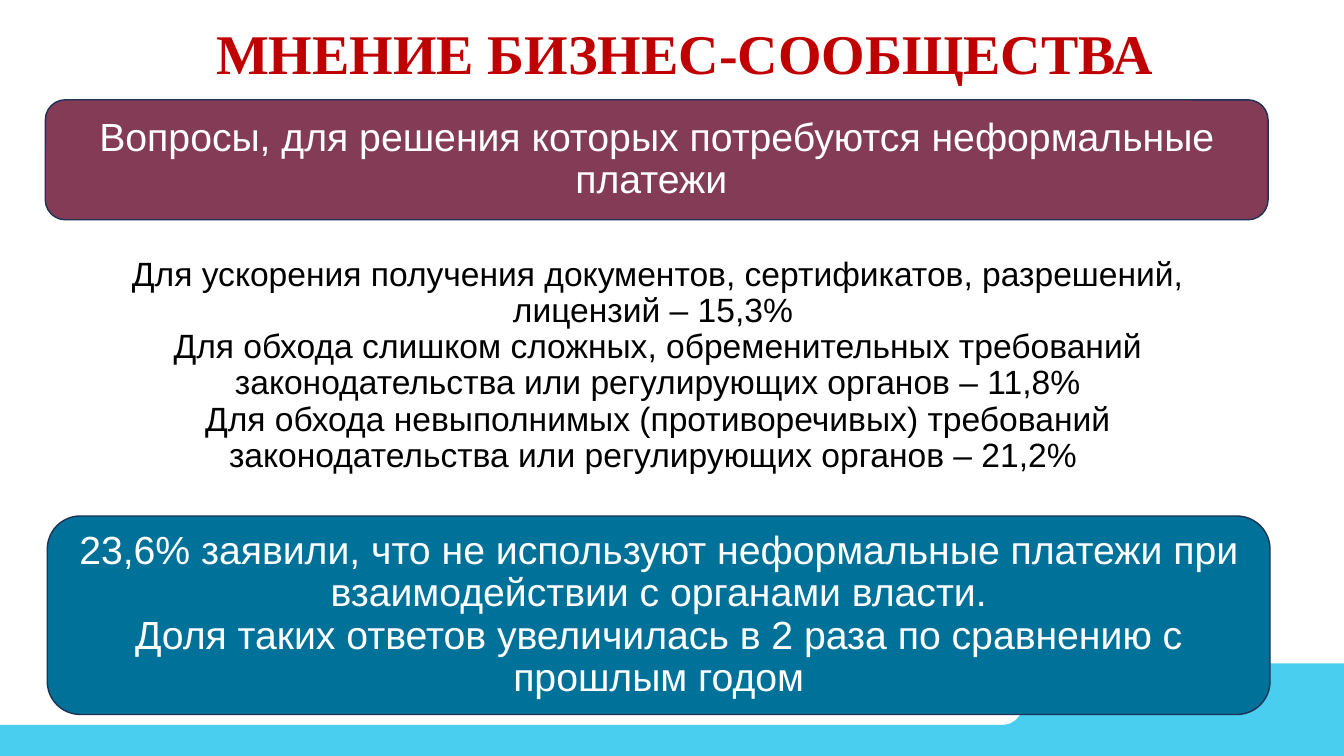
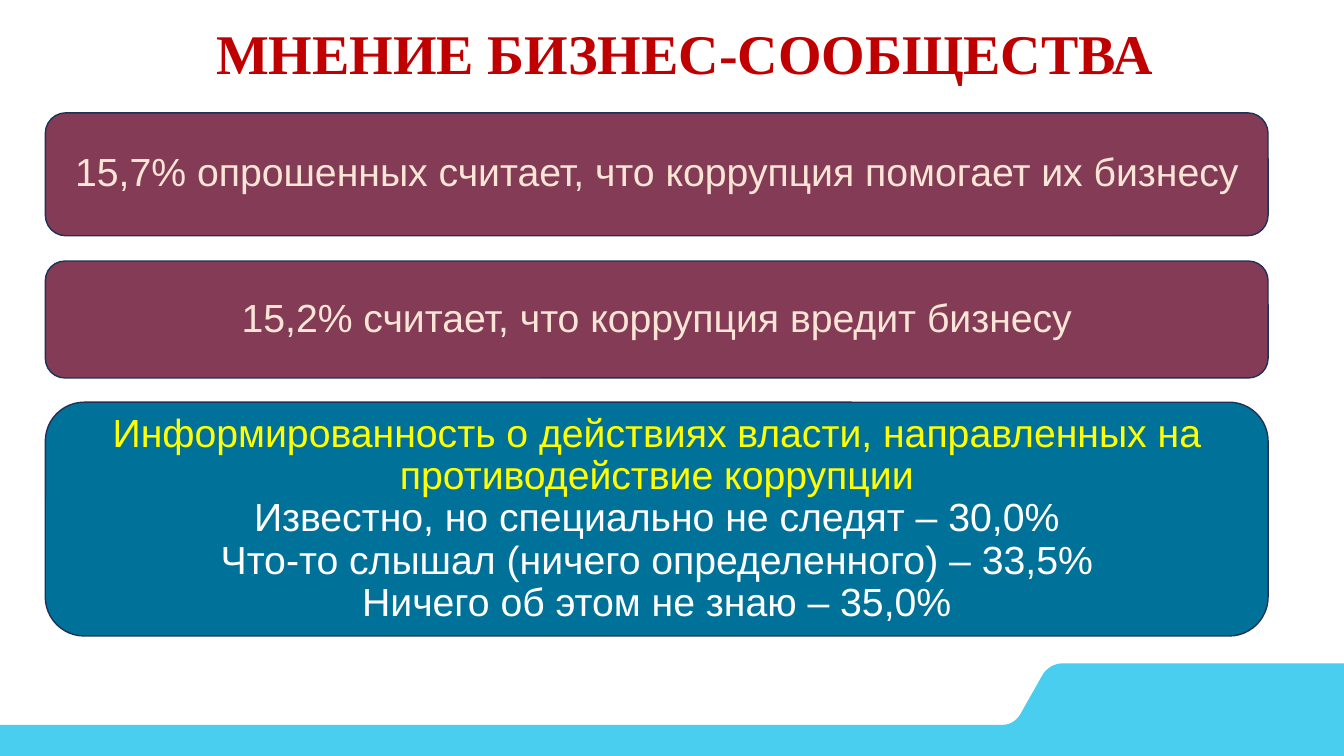
"""Build two slides on the opinion of the business community."""
from pptx import Presentation
from pptx.dml.color import RGBColor
from pptx.enum.shapes import MSO_SHAPE as Shape
from pptx.enum.text import MSO_ANCHOR as Anchor, PP_ALIGN as Align
from pptx.util import Pt

COLORS = {
    "white": "FFFFFF",
    "black": "000000",
    "title": "C00000",
    "plum": "843C56",
    "teal": "00729A",
    "outline": "1E3256",
    "band": "49CEEF",
    "cream": "FBE5D6",
    "yellow": "FFFF00",
}
WIDTH, HEIGHT = 960, 540
LEFT, PANEL_WIDTH = 32.4, 873.4
TITLE = "МНЕНИЕ БИЗНЕС-СООБЩЕСТВА"
CURVE_STEPS = 12


def color(name):
    return RGBColor.from_string(COLORS[name])


def paint(shape, fill):
    shape.shadow.inherit = False
    shape.fill.solid()
    shape.fill.fore_color.rgb = color(fill)


def write(shape, lines, size, ink, font="Arial", bold=False, anchor=Anchor.MIDDLE):
    frame = shape.text_frame
    frame.word_wrap = True
    frame.vertical_anchor = anchor
    frame.text = "\n".join(lines)
    for para in frame.paragraphs:
        para.alignment = Align.CENTER
        para.line_spacing = 0.9
        for span in para.runs:
            span.font.name = font
            span.font.size = Pt(size)
            span.font.bold = bold
            span.font.color.rgb = color(ink)
    return frame


def add_text(page, left, top, width, height, lines, size, ink, **style):
    box = page.shapes.add_textbox(Pt(left), Pt(top), Pt(width), Pt(height))
    return write(box, lines, size, ink, **style)


def add_panel(page, top, height, fill, lines, ink="white", left=LEFT):
    panel = page.shapes.add_shape(
        Shape.ROUNDED_RECTANGLE, Pt(left), Pt(top), Pt(PANEL_WIDTH), Pt(height))
    paint(panel, fill)
    panel.line.color.rgb = color("outline")
    panel.line.width = Pt(1)
    return write(panel, lines, 28, ink)


def curve(*controls):
    points = []
    for step in range(CURVE_STEPS + 1):
        t = step / CURVE_STEPS
        weights = ((1 - t) ** 3, 3 * t * (1 - t) ** 2, 3 * t * t * (1 - t), t ** 3)
        points.append(tuple(
            sum(weight * control[axis] for weight, control in zip(weights, controls))
            for axis in (0, 1)))
    return points


def add_band(page):
    outline = [
        *curve((759.6, 473.8), (753.1, 473.8), (747.4, 477.2), (744.5, 482.4)),
        *curve((728.6, 510.5), (725.8, 514.9), (721.4, 517.7), (716.4, 517.7)),
        (0, 517.7), (0, HEIGHT), (WIDTH, HEIGHT), (WIDTH, 473.8),
    ]
    start, *rest = [(Pt(x), Pt(y)) for x, y in outline]
    builder = page.shapes.build_freeform(*start)
    builder.add_line_segments(rest, close=True)
    band = builder.convert_to_shape()
    paint(band, "band")
    band.line.fill.background()


def add_page(deck):
    page = deck.slides.add_slide(deck.slide_layouts[6])
    add_band(page)
    frame = add_text(page, LEFT, 10.1, 913, 60.5, [TITLE], 40, "title",
                     font="Times New Roman", bold=True)
    frame.margin_left = frame.margin_right = frame.margin_top = frame.margin_bottom = 0
    return page


def build_payments(deck):
    page = add_page(deck)
    add_panel(page, 71.3, 85.7, "plum", [
        "Вопросы, для решения которых потребуются неформальные платежи "])
    add_panel(page, 368.6, 141.8, "teal", [
        "23,6% заявили, что не используют неформальные платежи при "
        "взаимодействии с органами власти.",
        "Доля таких ответов увеличилась в 2 раза по сравнению с прошлым годом",
    ], left=33.8)
    add_text(page, 49.7, 180, 840.2, 164.2, [
        "Для ускорения получения документов, сертификатов, разрешений, "
        "лицензий – 15,3% ",
        "Для обхода слишком сложных, обременительных требований "
        "законодательства или регулирующих органов – 11,8%",
        "Для обхода невыполнимых (противоречивых) требований "
        "законодательства или регулирующих органов – 21,2% ",
    ], 24, "black", anchor=Anchor.TOP)


def build_awareness(deck):
    page = add_page(deck)
    add_panel(page, 80.6, 87.8, "plum", [
        "15,7% опрошенных считает, что коррупция помогает их бизнесу"], "cream")
    add_panel(page, 186.5, 83.5, "plum", [
        "15,2% считает, что коррупция вредит бизнесу"], "cream")
    frame = add_panel(page, 287.3, 167, "teal", [
        "Информированность о действиях власти, направленных на "
        "противодействие коррупции",
        "Известно, но специально не следят – 30,0%",
        "Что-то слышал (ничего определенного) – 33,5%",
        "Ничего об этом не знаю – 35,0%",
    ])
    frame.paragraphs[0].runs[0].font.color.rgb = color("yellow")


def main():
    deck = Presentation()
    deck.slide_width, deck.slide_height = Pt(WIDTH), Pt(HEIGHT)
    build_payments(deck)
    build_awareness(deck)
    deck.save("out.pptx")


if __name__ == "__main__":
    main()
